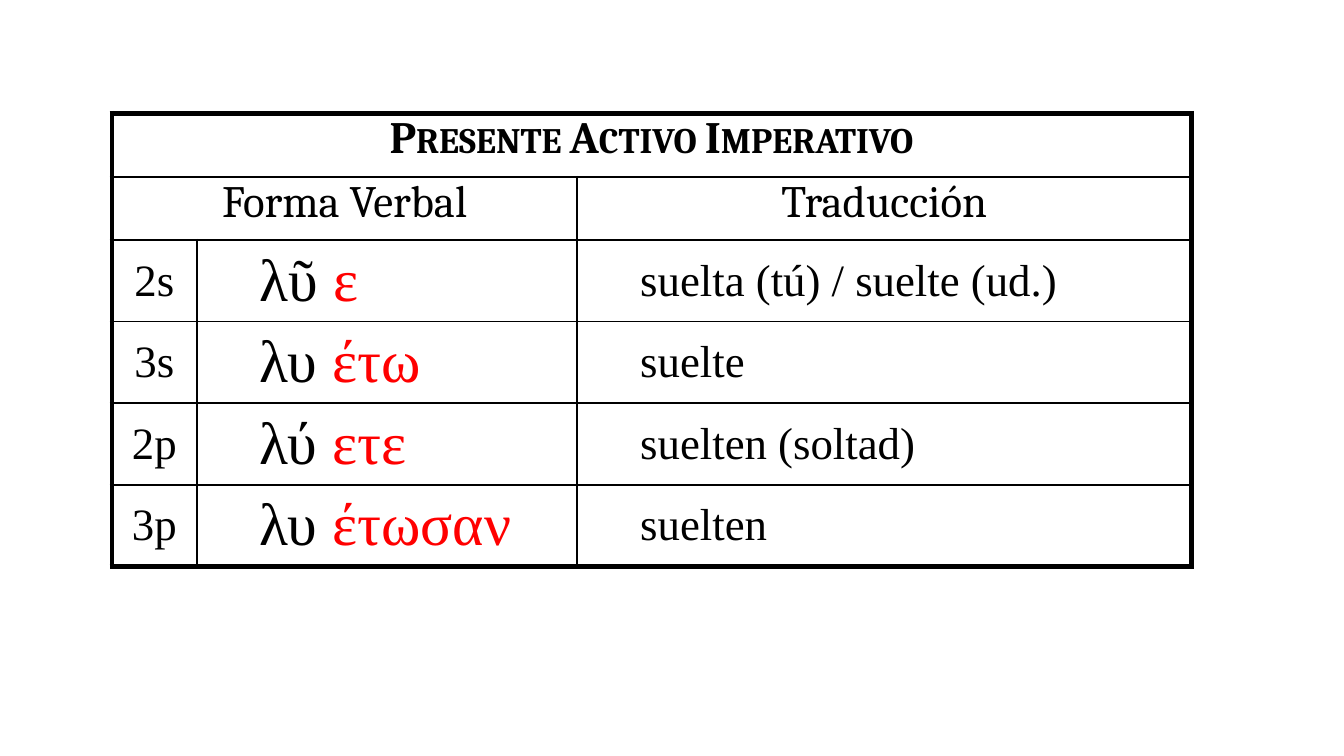
from dataclasses import dataclass
from itertools import chain, repeat

from lxml.etree import SubElement
from pptx import Presentation
from pptx.dml.color import RGBColor
from pptx.enum.text import MSO_ANCHOR, PP_ALIGN
from pptx.oxml.ns import qn
from pptx.util import Pt


@dataclass(frozen=True)
class Theme:
    """Colours, fonts, type sizes and line widths."""
    ink: str = "000000"
    mark: str = "FF0000"
    head: str = "Cambria"
    body: str = "Times New Roman"
    size: float = 24
    large: float = 32
    thick: float = 3
    mid: float = 1.5
    thin: float = 1


THEME = Theme()
COLS = (45.4, 203.8, 329)
ROWS = (34, 34) + (43.7,) * 4
LEVELS = (THEME.thick, THEME.thin, THEME.mid) + (THEME.thin,) * 3 + (THEME.thick,)
SIDES = chain(
    [(THEME.thick, 0, 0, THEME.thick), (THEME.thick, 0, THEME.thin, THEME.thick)],
    repeat((THEME.thick, THEME.mid, THEME.mid, THEME.thick)),
)
FORMS = (
    ("2s", "λῦ ", "ε", "suelta (tú) / suelte (ud.)"),
    ("3s", "λυ ", "έτω", "suelte"),
    ("2p", "λύ ", "ετε", "suelten (soltad)"),
    ("3p", "λυ ", "έτωσαν", "suelten"),
)


def add_run(cell, text, font=THEME.body, size=THEME.size, color=THEME.ink, bold=False):
    """Add one formatted run to a cell and return it."""
    run = cell.text_frame.paragraphs[0].add_run()
    run.text = text
    run.font.name = font
    run.font.size = Pt(size)
    run.font.bold = bold
    run.font.color.rgb = RGBColor.from_string(color)
    return run


def center(cell):
    """Centre the text of a cell."""
    cell.text_frame.paragraphs[0].alignment = PP_ALIGN.CENTER


def indent(cell):
    """Indent the first line of a cell."""
    props = cell.text_frame.paragraphs[0]._p.get_or_add_pPr()
    props.set("marL", "0")
    props.set("indent", str(Pt(28.8)))


def draw_edge(cell, side, width):
    """Draw one border of a cell, or none when the width is zero."""
    line = SubElement(cell._tc.get_or_add_tcPr(), qn(f"a:ln{side}"), w=str(Pt(width)))
    if width:
        fill = SubElement(line, qn("a:solidFill"))
        SubElement(fill, qn("a:srgbClr"), val=THEME.ink)
    else:
        SubElement(line, qn("a:noFill"))


def style_grid(table):
    """Set the borders, margins and fill of every cell."""
    for row, edges in zip(range(len(ROWS)), SIDES):
        for col in range(len(COLS)):
            cell = table.cell(row, col)
            draw_edge(cell, "L", edges[col])
            draw_edge(cell, "R", edges[col + cell.span_width])
            draw_edge(cell, "T", LEVELS[row])
            draw_edge(cell, "B", LEVELS[row + 1])
            cell.fill.background()
            cell.margin_left = cell.margin_right = Pt(5)
            cell.margin_top = cell.margin_bottom = Pt(0)
            if row > 1:
                cell.vertical_anchor = MSO_ANCHOR.MIDDLE


def add_grid(slide):
    """Add the table with its column and row sizes and merged heads."""
    frame = slide.shapes.add_table(
        len(ROWS), len(COLS), Pt(60), Pt(60.7), Pt(sum(COLS)), Pt(sum(ROWS))
    )
    table = frame.table
    table.first_row = table.horz_banding = False
    for col, width in zip(table.columns, COLS):
        col.width = Pt(width)
    for row, height in zip(table.rows, ROWS):
        row.height = Pt(height)
    table.cell(0, 0).merge(table.cell(0, 2))
    table.cell(1, 0).merge(table.cell(1, 1))
    return table


def fill_heads(table):
    """Write the title row and the column heads."""
    title = table.cell(0, 0)
    run = add_run(title, "Presente Activo Imperativo", THEME.head, bold=True)
    run.font._element.set("cap", "small")
    center(title)
    for col, text in ((0, "Forma Verbal"), (2, "Traducción")):
        cell = table.cell(1, col)
        add_run(cell, text, THEME.head)
        center(cell)


def fill_forms(table):
    """Write one row for each verb form."""
    for row, (person, stem, ending, sense) in enumerate(FORMS, 2):
        label, verb, gloss = (table.cell(row, col) for col in range(3))
        add_run(label, person)
        center(label)
        add_run(verb, stem, size=THEME.large)
        add_run(verb, ending, size=THEME.large, color=THEME.mark)
        indent(verb)
        add_run(gloss, sense)
        indent(gloss)


def main():
    """Build the slide and save it."""
    deck = Presentation()
    deck.slide_width, deck.slide_height = Pt(720), Pt(405)
    slide = deck.slides.add_slide(deck.slide_layouts[6])
    table = add_grid(slide)
    style_grid(table)
    fill_heads(table)
    fill_forms(table)
    deck.save("out.pptx")


if __name__ == "__main__":
    main()
